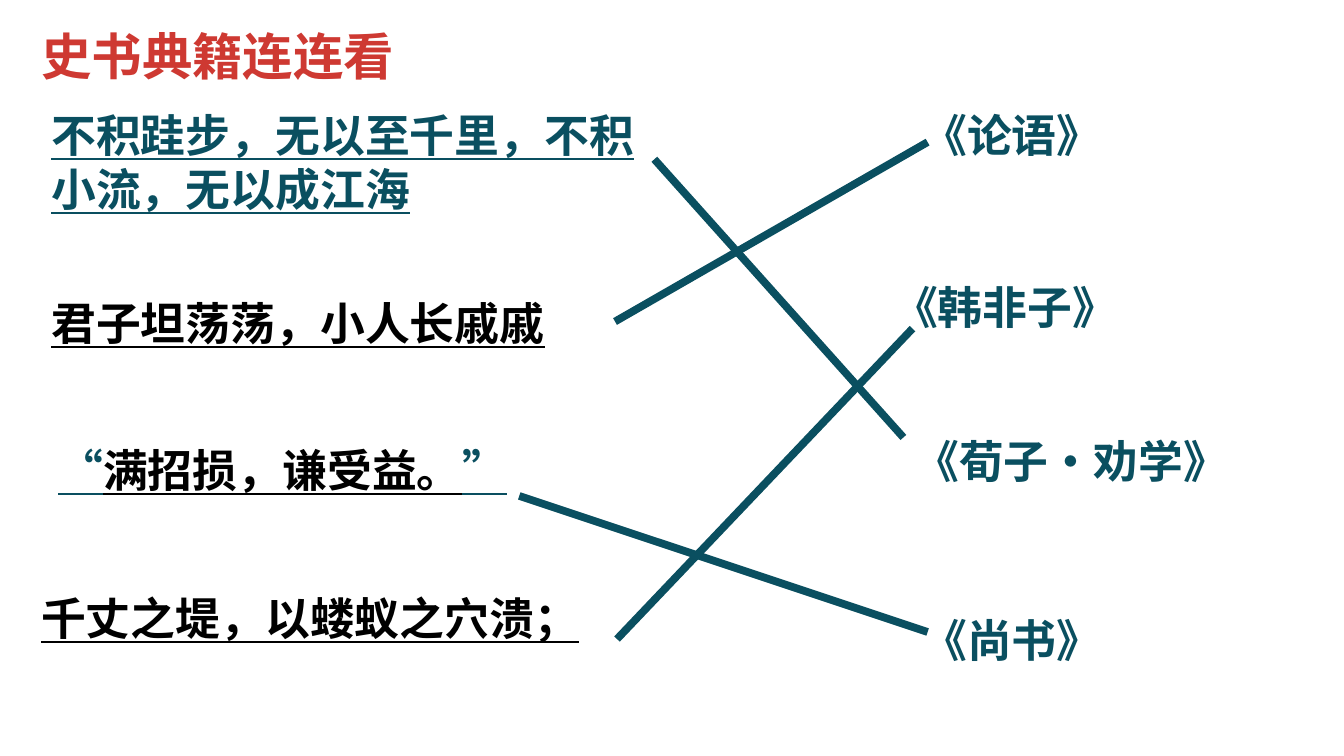
import dataclasses

import lxml.etree
import pptx
import pptx.dml.color
import pptx.enum.lang
import pptx.enum.shapes
import pptx.enum.text
import pptx.oxml.ns
import pptx.slide
import pptx.util

FONT = "Noto Sans CJK SC"
COLORS = {"title": "CE3932", "teal": "0A4F60", "black": "000000"}


@dataclasses.dataclass
class Label:
    left: float
    top: float
    width: float
    runs: list[tuple[str, str]]
    height: float = 0.64
    size: int = 32
    underline: bool = False
    indent: float = 0
    side_inset: float = 0.1
    end_inset: float = 0.05


@dataclasses.dataclass
class Match:
    start: tuple[float, float]
    end: tuple[float, float]


TITLE = Label(0.34, 0.21, 9.16, [("史书典籍连连看", "title")],
              height=0.68, size=36, side_inset=0.07, end_inset=0.04)

QUOTES = [
    Label(0.41, 1.02, 6.38, [("不积跬步，无以至千里，不积小流，无以成江海", "teal")],
          height=1.18, underline=True),
    Label(0.41, 2.88, 5.56, [("君子坦荡荡，小人长戚戚", "black")], underline=True),
    Label(0.48, 4.34, 6.01,
          [("“", "teal"), ("满招损，谦受益。", "black"), ("”", "teal")], underline=True),
    Label(0.31, 5.81, 6.33, [("千丈之堤，以蝼蚁之穴溃；", "black")], underline=True),
]

BOOKS = [
    Label(9.05, 1.02, 3, [("《论语》", "teal")]),
    Label(8.76, 2.73, 3.74, [("《韩非子》", "teal")]),
    Label(8.68, 4.25, 4.31, [("《荀子·劝学》", "teal")], indent=0.29),
    Label(9.05, 6.03, 3.94, [("《尚书》", "teal")]),
]

MATCHES = [
    Match((6.49, 1.58), (8.96, 4.34)),
    Match((6.1, 3.19), (9.2, 1.41)),
    Match((6.12, 6.34), (9.05, 3.26)),
    Match((5.15, 4.92), (9.2, 6.27)),
]


def color(name: str) -> pptx.dml.color.RGBColor:
    return pptx.dml.color.RGBColor.from_string(COLORS[name])


def draw_label(slide: pptx.slide.Slide, label: Label) -> None:
    inches = pptx.util.Inches
    shape = slide.shapes.add_textbox(
        inches(label.left), inches(label.top), inches(label.width), inches(label.height))
    frame = shape.text_frame
    frame.word_wrap = True
    frame.auto_size = pptx.enum.text.MSO_AUTO_SIZE.SHAPE_TO_FIT_TEXT
    frame.margin_left = frame.margin_right = inches(label.side_inset)
    frame.margin_top = frame.margin_bottom = inches(label.end_inset)
    paragraph = frame.paragraphs[0]
    if label.indent:
        properties = paragraph._p.get_or_add_pPr()
        properties.set("marL", "0")
        properties.set("indent", str(inches(label.indent)))
    for text, color_name in label.runs:
        run = paragraph.add_run()
        run.text = text
        font = run.font
        font.size = pptx.util.Pt(label.size)
        font.bold = True
        font.underline = label.underline
        font.language_id = pptx.enum.lang.MSO_LANGUAGE_ID.SIMPLIFIED_CHINESE
        font.color.rgb = color(color_name)
        font.name = FONT
        east_asian = lxml.etree.SubElement(
            run._r.get_or_add_rPr(), pptx.oxml.ns.qn("a:ea"))
        east_asian.set("typeface", FONT)


def draw_match(slide: pptx.slide.Slide, match: Match) -> None:
    ends = [pptx.util.Inches(value) for value in match.start + match.end]
    connector = slide.shapes.add_connector(
        pptx.enum.shapes.MSO_CONNECTOR.STRAIGHT, *ends)
    connector.line.color.rgb = color("teal")
    connector.line.width = pptx.util.Pt(5.5)
    lxml.etree.SubElement(
        connector._element.spPr, pptx.oxml.ns.qn("a:effectLst"))


def main() -> None:
    presentation = pptx.Presentation()
    presentation.slide_width = pptx.util.Inches(13.33)
    presentation.slide_height = pptx.util.Inches(7.5)
    slide = presentation.slides.add_slide(presentation.slide_layouts[6])
    for label in [TITLE, *QUOTES, *BOOKS]:
        draw_label(slide, label)
    for match in MATCHES:
        draw_match(slide, match)
    presentation.save("out.pptx")


if __name__ == "__main__":
    main()
